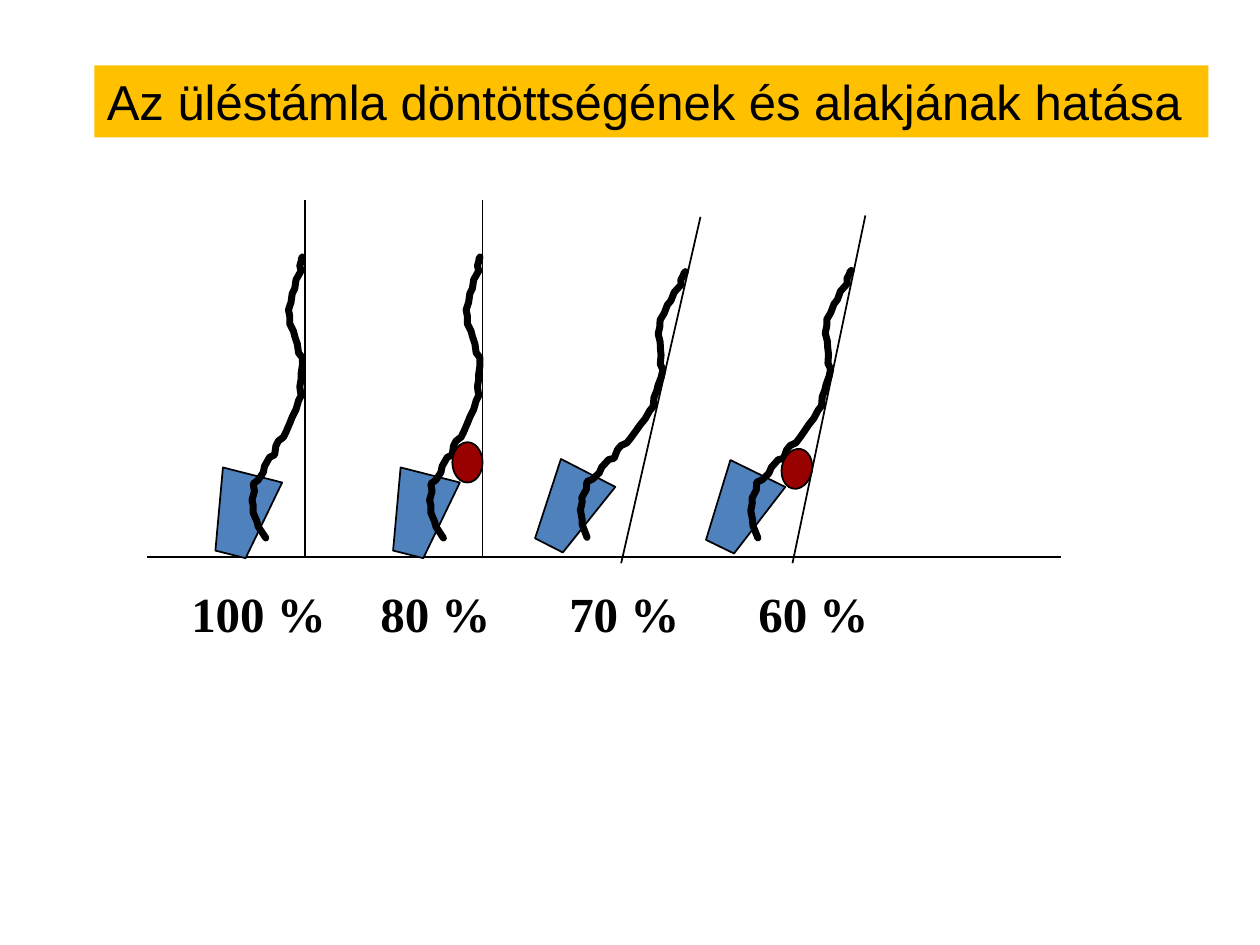
import math

import pptx
import pptx.dml.color
import pptx.enum.shapes
import pptx.enum.text
import pptx.oxml.ns
import pptx.util
from lxml import etree
from pptx.util import Inches

COLORS = {"ink": "000000", "pelvis": "4F81BD", "cushion": "990000", "title": "FFC000"}

# Upright figure, in inches; every seat is this figure moved and tilted about its base
BASE = (2.42, 4.41)
BACKREST_TOP = (2.42, 1.59)
CUSHION_CENTER = (2.3, 3.67)
CUSHION_SIZE = (0.24, 0.32)
PELVIS = [(1.77, 3.71), (1.71, 4.37), (1.95, 4.43), (2.24, 3.83)]
SPINE = [
    (2.11, 4.27), (2.05, 4.18), (2.04, 4.14), (2.01, 4.07), (2.01, 4.01), (2, 3.97),
    (2.02, 3.9), (2.01, 3.84), (2.05, 3.81), (2.09, 3.75), (2.1, 3.7), (2.14, 3.63),
    (2.18, 3.61), (2.19, 3.54), (2.21, 3.5), (2.25, 3.47), (2.27, 3.43), (2.3, 3.36),
    (2.32, 3.31), (2.35, 3.25), (2.37, 3.18), (2.39, 3.14), (2.38, 3.07), (2.39, 3.01),
    (2.39, 2.97), (2.4, 2.9), (2.4, 2.84), (2.37, 2.8), (2.36, 2.73), (2.34, 2.67),
    (2.33, 2.63), (2.3, 2.57), (2.3, 2.51), (2.29, 2.46), (2.31, 2.4), (2.32, 2.33),
    (2.34, 2.29), (2.35, 2.22), (2.39, 2.15), (2.38, 2.11), (2.4, 2.04), (2.39, 2.06),
]

# Base point, backrest tilt in degrees, lumbar cushion
SEATS = [
    ((2.42, 4.41), 0, False),
    ((3.83, 4.41), 0, True),
    ((4.93, 4.47), 12.9, False),
    ((6.29, 4.47), 11.83, True),
]

# Load label and box width
LABELS = [("100 %", 1.33), ("80 %", 1.25), ("70 %", 1.17), ("60 %", 1.92)]


def place(point, base, tilt):
    """Move a point of the upright figure to a seat tilted about its base."""
    angle = math.radians(tilt)
    x, y = point[0] - BASE[0], point[1] - BASE[1]
    return (base[0] + x * math.cos(angle) - y * math.sin(angle),
            base[1] + x * math.sin(angle) + y * math.cos(angle))


class Drawing:
    def __init__(self, slide):
        self.slide = slide
        self.shapes = slide.shapes

    def color(self, name):
        return pptx.dml.color.RGBColor.from_string(COLORS[name])

    def paint(self, shape, fill=None, line_width=None):
        shape.shadow.inherit = False
        if fill:
            shape.fill.solid()
            shape.fill.fore_color.rgb = self.color(fill)
        else:
            shape.fill.background()
        if line_width:
            shape.line.color.rgb = self.color("ink")
            shape.line.width = pptx.util.Pt(line_width)
        else:
            shape.line.fill.background()

    def line(self, start, end):
        connector = self.shapes.add_connector(
            pptx.enum.shapes.MSO_CONNECTOR.STRAIGHT,
            *(Inches(length) for length in (*start, *end)))
        connector.line.color.rgb = self.color("ink")
        connector.line.width = pptx.util.Pt(1)
        etree.SubElement(connector._element.spPr, pptx.oxml.ns.qn("a:effectLst"))

    def outline(self, points, close, fill=None, line_width=1):
        corners = [(Inches(x), Inches(y)) for x, y in points]
        builder = self.shapes.build_freeform(*corners[0])
        builder.add_line_segments(corners[1:], close=close)
        shape = builder.convert_to_shape()
        self.paint(shape, fill, line_width)
        return shape

    def spine(self, points):
        shape = self.outline(points, close=False, line_width=4)
        line = shape.line._get_or_add_ln()
        line.set("cap", "rnd")
        etree.SubElement(line, pptx.oxml.ns.qn("a:round"))

    def ellipse(self, center, size, tilt, fill):
        shape = self.shapes.add_shape(
            pptx.enum.shapes.MSO_SHAPE.OVAL,
            Inches(center[0] - size[0] / 2), Inches(center[1] - size[1] / 2),
            Inches(size[0]), Inches(size[1]))
        shape.rotation = tilt
        self.paint(shape, fill, 1)

    def text(self, words, left, top, width, font, bold=False, fill=None):
        box = self.shapes.add_textbox(
            Inches(left), Inches(top), Inches(width), Inches(0.57))
        if fill:
            self.paint(box, fill)
        frame = box.text_frame
        frame.word_wrap = True
        frame.auto_size = pptx.enum.text.MSO_AUTO_SIZE.SHAPE_TO_FIT_TEXT
        run = frame.paragraphs[0].add_run()
        run.text = words
        run.font.name = font
        run.font.size = pptx.util.Pt(28)
        run.font.bold = bold
        run.font.color.rgb = self.color("ink")

    def seat(self, base, tilt, has_cushion):
        self.outline([place(point, base, tilt) for point in PELVIS],
                     close=True, fill="pelvis")
        self.spine([place(point, base, tilt) for point in SPINE])
        self.line(base, place(BACKREST_TOP, base, tilt))
        if has_cushion:
            self.ellipse(place(CUSHION_CENTER, base, tilt), CUSHION_SIZE, tilt, "cushion")


def main():
    presentation = pptx.Presentation()
    presentation.slide_width = Inches(10)
    presentation.slide_height = Inches(7.5)
    drawing = Drawing(presentation.slides.add_slide(presentation.slide_layouts[6]))

    # Seat level
    drawing.line((1.17, 4.42), (8.42, 4.42))

    # Four seat positions
    for base, tilt, has_cushion in SEATS:
        drawing.seat(base, tilt, has_cushion)

    # Load labels
    for column, (label, width) in enumerate(LABELS):
        drawing.text(label, 1.42 + 1.5 * column, 4.58, width, "Times New Roman", bold=True)

    # Title
    drawing.text("Az üléstámla döntöttségének és alakjának hatása",
                 0.75, 0.52, 8.84, "Arial", fill="title")

    presentation.save("out.pptx")


if __name__ == "__main__":
    main()
